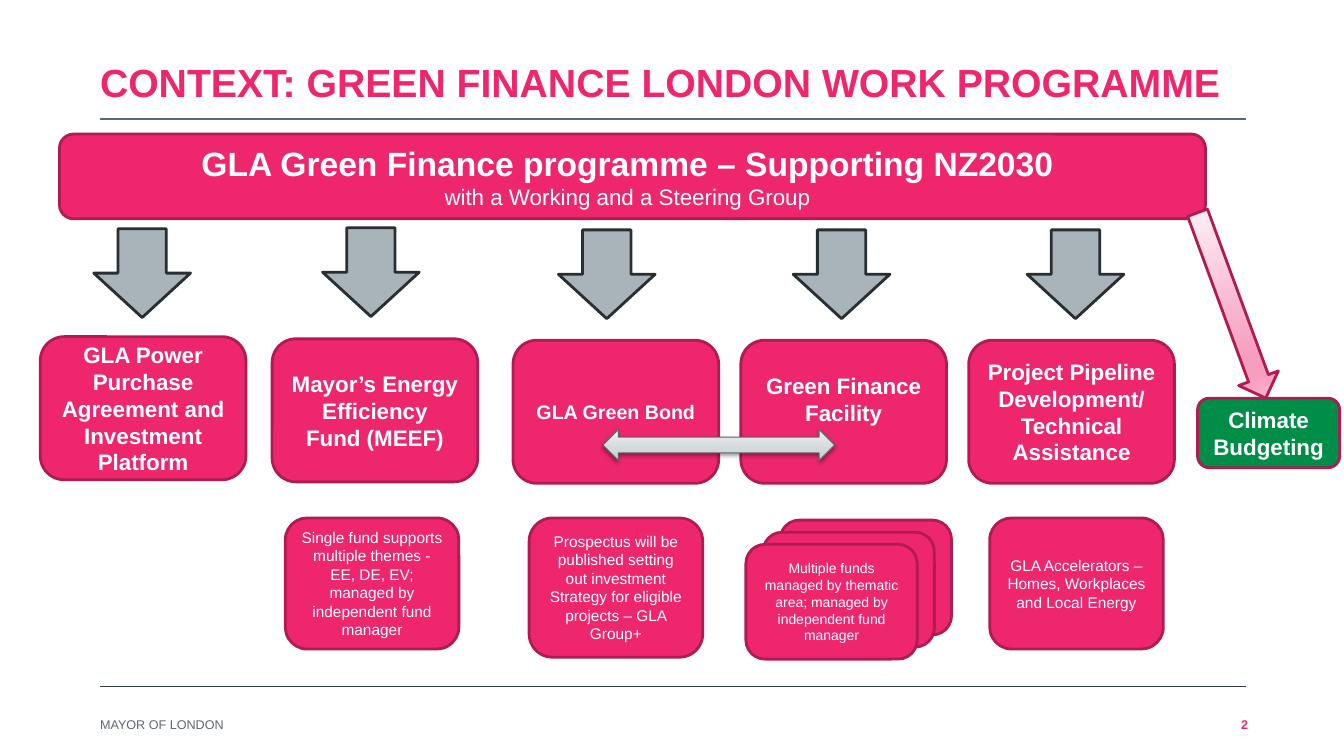
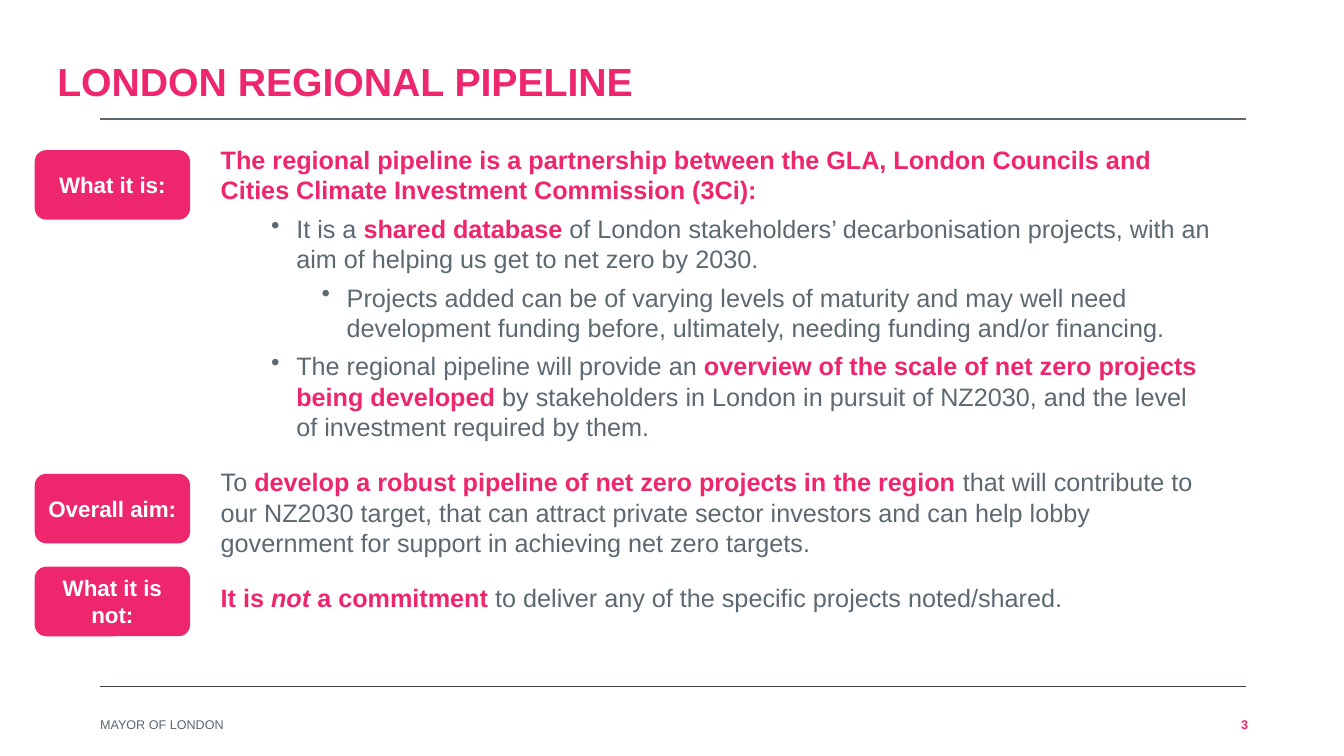
import dataclasses

import lxml.etree
import pptx
import pptx.dml.color
import pptx.enum.shapes
import pptx.enum.text
import pptx.oxml
import pptx.oxml.ns
import pptx.util

Pt = pptx.util.Pt
Kind = pptx.enum.shapes.MSO_SHAPE
Align = pptx.enum.text.PP_ALIGN
Anchor = pptx.enum.text.MSO_ANCHOR
qn = pptx.oxml.ns.qn


@dataclasses.dataclass(frozen=True)
class Theme:
    font: str = "Arial"
    pink: str = "EE266D"
    edge: str = "B01C51"
    green: str = "008D48"
    white: str = "FFFFFF"
    grey: str = "5C6970"
    rule: str = "353E43"
    arrow: str = "A8B4BA"
    ink: str = "282E32"
    steel: str = "59676E"
    fade: tuple = ((0, "FEF4F8"), (74, "F79DBD"), (83, "F79DBD"), (100, "FABED3"))
    shine: tuple = ((0, "C0C8CD"), (35, "D3D8DB"), (100, "EEF0F2"))
    title: int = 28
    lead: int = 24
    body: int = 18
    label: int = 16
    minor: int = 14
    note: int = 11
    tiny: int = 10
    foot: int = 9


THEME = Theme()
INSET = (7.2, 3.6, 7.2, 3.6)
FLUSH = (0, 3.6, 7.2, 3.6)
LEFT, RIGHT, WIDE = 71.5, 890, 818.6


def rgb(code):
    return pptx.dml.color.RGBColor.from_string(code)


def child(node, tag, **attrs):
    item = lxml.etree.SubElement(node, qn(tag))
    for key, value in attrs.items():
        item.set(key, str(value))
    return item


def write(shape, *paras, size=THEME.label, color=THEME.white, bold=False,
          align=Align.CENTER, anchor=Anchor.MIDDLE, inset=INSET, line=None):
    """Each paragraph is text, or a dict with runs and its own size, bold, level, after.
    A run is (text, marks): b is bold pink, i is italic."""
    frame = shape.text_frame
    frame.word_wrap = True
    frame.vertical_anchor = anchor
    (frame.margin_left, frame.margin_top,
     frame.margin_right, frame.margin_bottom) = map(Pt, inset)
    for i, item in enumerate(paras):
        spec = {"runs": [(item, "")]} if isinstance(item, str) else item
        para = frame.paragraphs[0] if i == 0 else frame.add_paragraph()
        para.alignment = align
        if line:
            para.line_spacing = line
        if "after" in spec:
            para.space_after = Pt(spec["after"])
        level = spec.get("level", 0)
        if level:
            para.level = level
            props = para._p.get_or_add_pPr()
            props.set("marL", str(Pt(18 + 36 * level)))
            props.set("indent", str(-Pt(18)))
            child(props, "a:buChar", char="•")
        for words, marks in spec["runs"]:
            run = para.add_run()
            run.text = words
            font = run.font
            font.name = THEME.font
            font.size = Pt(spec.get("size", size))
            font.bold = spec.get("bold", bold) or "b" in marks
            font.italic = "i" in marks
            font.color.rgb = rgb(THEME.pink if "b" in marks else color)


class Deck:
    def __init__(self):
        self.file = pptx.Presentation()
        self.file.slide_width, self.file.slide_height = Pt(960), Pt(540)
        self.slide = None

    def page(self, title, number, left, top):
        self.slide = self.file.slides.add_slide(self.file.slide_layouts[6])
        self.rule(490.5, THEME.rule)
        self.rule(85, THEME.grey)
        foot = dict(size=THEME.foot, inset=(0, 0, 0, 0))
        self.text(LEFT, 509, 368, 17, "MAYOR OF LONDON", color=THEME.grey, **foot)
        self.text(523.5, 509, 368, 17, number, color=THEME.pink, bold=True,
                  align=Align.RIGHT, **foot)
        self.text(left, top, WIDE, 42.5, title, size=THEME.title,
                  color=THEME.pink, bold=True, inset=FLUSH, line=0.9)

    def rule(self, y, color):
        line = self.slide.shapes.add_connector(
            pptx.enum.shapes.MSO_CONNECTOR.STRAIGHT, Pt(LEFT), Pt(y), Pt(RIGHT), Pt(y))
        line.line.color.rgb = rgb(color)
        line.line.width = Pt(1)
        child(line._element.spPr, "a:effectLst")

    def text(self, x, y, w, h, *paras, align=Align.LEFT, **fmt):
        box = self.slide.shapes.add_textbox(Pt(x), Pt(y), Pt(w), Pt(h))
        write(box, *paras, align=align, **fmt)

    def shape(self, kind, x, y, w, h, fill=THEME.pink, edge=THEME.edge, width=2):
        item = self.slide.shapes.add_shape(kind, Pt(x), Pt(y), Pt(w), Pt(h))
        item.shadow.inherit = False
        item.fill.solid()
        item.fill.fore_color.rgb = rgb(fill)
        if edge:
            item.line.color.rgb = rgb(edge)
            item.line.width = Pt(width)
        else:
            item.line.fill.background()
        return item

    def card(self, x, y, w, h, *paras, fill=THEME.pink, edge=THEME.edge, **fmt):
        item = self.shape(Kind.ROUNDED_RECTANGLE, x, y, w, h, fill, edge)
        if paras:
            write(item, *paras, **fmt)

    def blend(self, item, stops, angle):
        props = item._element.spPr
        grad = lxml.etree.Element(qn("a:gradFill"), rotWithShape="1")
        stop_list = child(grad, "a:gsLst")
        for place, color in stops:
            stop = child(stop_list, "a:gs", pos=place * 1000)
            child(stop, "a:srgbClr", val=color)
        child(grad, "a:lin", ang=angle * 60000, scaled=0)
        props.replace(props.find(qn("a:solidFill")), grad)

    def shade(self, item):
        effects = item._element.spPr.find(qn("a:effectLst"))
        cast = child(effects, "a:outerShdw", blurRad=Pt(3.1), dist=Pt(1.6),
                     dir=90 * 60000, rotWithShape=0)
        child(child(cast, "a:srgbClr", val="000000"), "a:alpha", val=38000)


def context(deck):
    deck.page("CONTEXT: GREEN FINANCE LONDON WORK PROGRAMME", "2", LEFT, 39.6)

    # Programme banner
    deck.card(42.5, 95.8, WIDE, 60.5,
              {"runs": [("GLA Green Finance programme – Supporting NZ2030", "")],
               "size": THEME.lead, "bold": True},
              "with a Working and a Steering Group", inset=FLUSH)

    # Strands, each below its arrow
    strands = [
        (67, 163.4, 28.8, 240.5,
         ["GLA Power Purchase Agreement and Investment Platform"], {}),
        (230.4, 162.7, 194.4, 242,
         ["Mayor’s Energy Efficiency", "Fund (MEEF)"], {}),
        (398.9, 164.2, 366.5, 243, ["GLA Green Bond"], {"size": THEME.minor}),
        (566.6, 164.2, 529.2, 243, ["Green Finance Facility"],
         {"inset": (7.2, 3.6, 7.2, 22)}),
        (733.7, 164.2, 692, 243,
         ["Project Pipeline Development/ Technical Assistance"], {}),
    ]
    for tip_x, tip_y, x, y, words, fmt in strands:
        deck.shape(Kind.DOWN_ARROW, tip_x, tip_y, 69.1, 63.4, THEME.arrow, THEME.ink)
        deck.card(x, y, 146.9, 102.2, *words, bold=True, **fmt)

    # Details
    for x, h, words in [
        (203.8, 93.6, "Single fund supports multiple themes - EE, DE, EV; "
                      "managed by independent fund manager"),
        (378, 99.4, "Prospectus will be published setting out investment "
                    "Strategy for eligible projects – GLA Group+"),
        (707, 93.6, "GLA Accelerators – Homes, Workplaces and Local Energy"),
    ]:
        deck.card(x, 370, 124, h, words, size=THEME.note)

    # Stack of funds
    funds = ("Multiple funds managed by thematic area; "
             "managed by independent fund manager")
    for i in range(3):
        deck.card(557.3 - 12.25 * i, 371.5 + 8.65 * i, 122.4, 82,
                  *([funds] if i == 2 else []), size=THEME.tiny)

    # Climate branch
    deck.card(855.4, 284.4, 101.5, 49.7, "Climate Budgeting",
              fill=THEME.green, bold=True)
    branch = deck.shape(Kind.DOWN_ARROW, 864.7, 147.6, 30.2, 141.1)
    branch.rotation = 339.8
    deck.blend(branch, THEME.fade, 90)

    # Link between bond and facility
    link = deck.shape(Kind.LEFT_RIGHT_ARROW, 430.6, 306.7, 165.6, 22.3,
                      edge=THEME.steel, width=0.75)
    deck.blend(link, THEME.shine, 270)
    deck.shade(link)


def region(deck):
    deck.page("LONDON REGIONAL PIPELINE", "3", 41, 38.9)

    # Main text
    deck.text(
        157.7, 99.4, 715.7, 390,
        {"after": 6, "runs": [
            ("The regional pipeline is a partnership between the GLA, London Councils "
             "and Cities Climate Investment Commission (3Ci):", "b")]},
        {"after": 6, "level": 1, "runs": [
            ("It is a ", ""), ("shared database ", "b"),
            ("of London stakeholders’ decarbonisation projects, with an aim of "
             "helping us get to net zero by 2030.", "")]},
        {"after": 6, "level": 2, "runs": [
            ("Projects added can be of varying levels of maturity and may well need "
             "development funding before, ultimately, needing funding and/or "
             "financing.", "")]},
        {"after": 18, "level": 1, "runs": [
            ("The regional pipeline will provide an", ""),
            (" overview of the scale of net zero projects being developed ", "b"),
            ("by stakeholders in London in pursuit of NZ2030, and the level of "
             "investment required by them.", "")]},
        {"after": 18, "runs": [
            ("To ", ""),
            ("develop a robust pipeline of net zero projects in the region ", "b"),
            ("that will contribute to our NZ2030 target, that can attract private "
             "sector investors and can help lobby government for support in "
             "achieving net zero targets.", "")]},
        {"after": 6, "runs": [
            ("It is ", "b"), ("not", "bi"), (" a commitment ", "b"),
            ("to deliver any of the specific projects noted/shared.", "")]},
        size=THEME.body, color=THEME.grey, anchor=Anchor.TOP, inset=FLUSH)

    # Side labels
    for y, words in [(107.2, "What it is:"), (338.4, "Overall aim:"),
                     (404.8, "What it is not:")]:
        deck.card(24.8, y, 111, 49.7, words, edge=None, bold=True)


def main():
    deck = Deck()
    context(deck)
    region(deck)
    deck.file.save("out.pptx")


if __name__ == "__main__":
    main()
